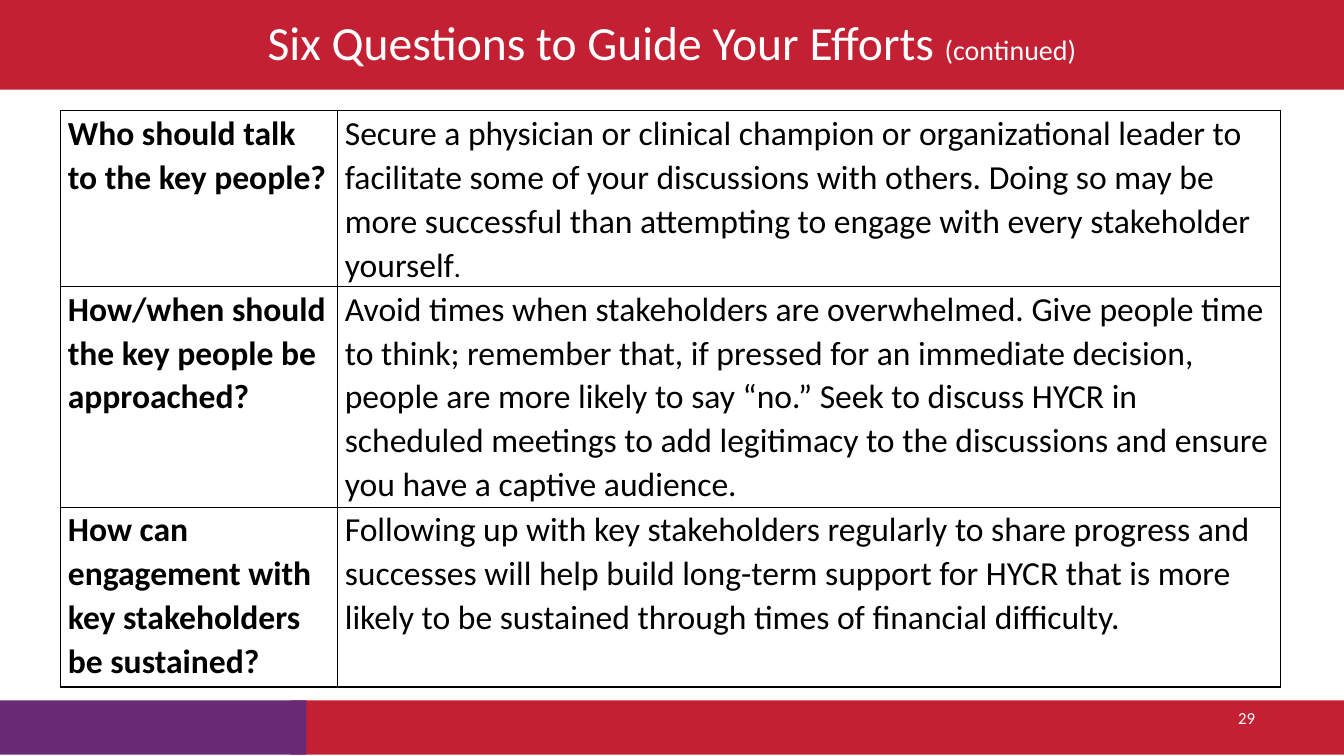
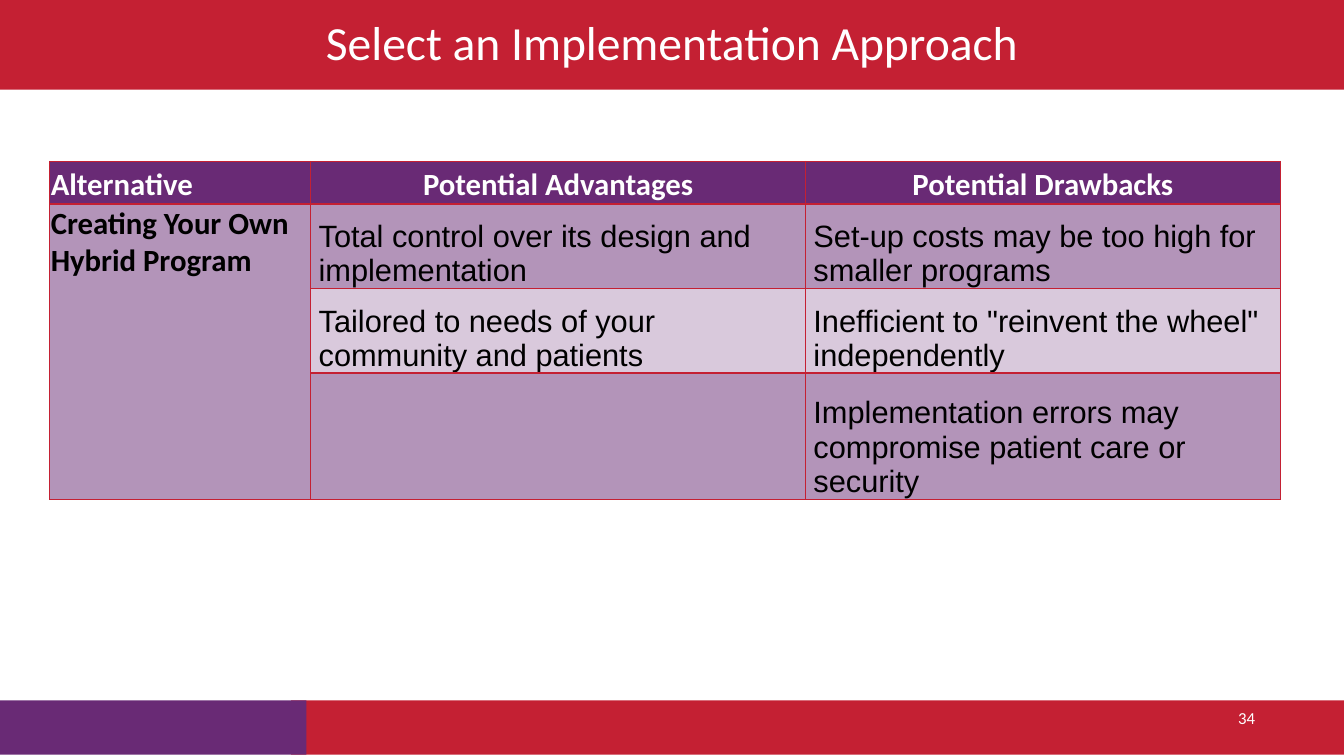
from lxml import etree
from pptx import Presentation
from pptx import util as u
from pptx.dml.color import RGBColor
from pptx.enum import shapes, text
from pptx.oxml.ns import qn

RED = RGBColor(0xC4, 0x20, 0x33)
PURPLE = RGBColor(0x69, 0x2A, 0x75)
WHITE = RGBColor(0xFF, 0xFF, 0xFF)
BLACK = RGBColor(0, 0, 0)

HEADING_FONT = "Calibri"
BODY_FONT = "Arial"
SLIDE_WIDTH, SLIDE_HEIGHT = 33.87, 19.05
TITLE_HEIGHT = 2.26
FOOTER_TOP, FOOTER_HEIGHT = 17.65, 1.37
FOOTER_RED_LEFT, FOOTER_PURPLE_WIDTH = 7.34, 7.72

QUESTIONS = [
    ("Who should talk to the key people?",
     [("Secure a physician or clinical champion or organizational leader to "
       "facilitate some of your discussions with others. Doing so may be more "
       "successful than attempting to engage with every stakeholder yourself", 24),
      (".", 20)]),
    ("How/when should the key people be approached?",
     [("Avoid times when stakeholders are overwhelmed. Give people time to think; "
       "remember that, if pressed for an immediate decision, people are more likely "
       "to say “no.” Seek to discuss HYCR in scheduled meetings to add legitimacy "
       "to the discussions and ensure you have a captive audience.", 24)]),
    ("How can engagement with key stakeholders be sustained?",
     [("Following up with key stakeholders regularly to share progress and successes "
       "will help build long-term support for HYCR that is more likely to be "
       "sustained through times of financial difficulty.", 24)]),
]

APPROACH_HEADINGS = ["Alternative", "Potential Advantages", "Potential Drawbacks"]
APPROACH_NAME = "Creating Your Own Hybrid Program"
APPROACH_POINTS = [
    ("Total control over its design and implementation",
     "Set-up costs may be too high for smaller programs"),
    ("Tailored to needs of your community and patients",
     'Inefficient to "reinvent the wheel" independently'),
    ("", "Implementation errors may compromise patient care or security"),
]


def write(paragraph, runs, color, font=HEADING_FONT, bold=False,
          align=text.PP_ALIGN.LEFT, spacing=1.0):
    """Fill a paragraph from (text, size) pairs."""
    paragraph.alignment = align
    paragraph.line_spacing = spacing
    paragraph.font.name = font
    paragraph.font.bold = bold
    paragraph.font.color.rgb = color
    paragraph.font.size = u.Pt(runs[0][1])
    for content, size in runs:
        run = paragraph.add_run()
        run.text = content
        if size != runs[0][1]:
            run.font.size = u.Pt(size)


def add_band(slide, left, top, width, height, color):
    band = slide.shapes.add_shape(shapes.MSO_SHAPE.RECTANGLE,
                                  u.Cm(left), u.Cm(top), u.Cm(width), u.Cm(height))
    band.shadow.inherit = False
    band.fill.solid()
    band.fill.fore_color.rgb = color
    band.line.fill.background()


def add_label(slide, left, top, width, height, runs, **style):
    """Add white text centred vertically in its box."""
    box = slide.shapes.add_textbox(u.Cm(left), u.Cm(top), u.Cm(width), u.Cm(height))
    frame = box.text_frame
    frame.word_wrap = True
    frame.vertical_anchor = text.MSO_ANCHOR.MIDDLE
    write(frame.paragraphs[0], runs, WHITE, **style)


def add_framed_slide(presentation, title_runs, number):
    """Add a slide with its title band, footer bands and page number."""
    slide = presentation.slides.add_slide(presentation.slide_layouts[6])
    add_band(slide, FOOTER_RED_LEFT, FOOTER_TOP, SLIDE_WIDTH - FOOTER_RED_LEFT,
             FOOTER_HEIGHT, RED)
    add_band(slide, 0, FOOTER_TOP, FOOTER_PURPLE_WIDTH, FOOTER_HEIGHT, PURPLE)
    add_band(slide, 0, 0, SLIDE_WIDTH, TITLE_HEIGHT, RED)
    add_label(slide, 0, 0, SLIDE_WIDTH, TITLE_HEIGHT, title_runs,
              align=text.PP_ALIGN.CENTER, spacing=0.9)
    add_label(slide, 26.16, 17.58, 5.72, 1.02, [(str(number), 12)],
              align=text.PP_ALIGN.RIGHT)
    return slide


def add_grid(slide, left, top, widths, heights, border):
    """Add an unfilled table with thin borders around every cell."""
    frame = slide.shapes.add_table(len(heights), len(widths), u.Cm(left), u.Cm(top),
                                   u.Cm(sum(widths)), u.Cm(sum(heights)))
    table = frame.table
    table.first_row = table.horz_banding = False
    for column, width in zip(table.columns, widths):
        column.width = u.Cm(width)
    for row, height in zip(table.rows, heights):
        row.height = u.Cm(height)
    for cell in table.iter_cells():
        cell.fill.background()
        set_borders(cell, border)
    return table


def set_borders(cell, color):
    properties = cell._tc.get_or_add_tcPr()
    for index, side in enumerate(("a:lnL", "a:lnR", "a:lnT", "a:lnB")):
        line = etree.Element(qn(side), w=str(u.Pt(1)))
        fill = etree.SubElement(line, qn("a:solidFill"))
        etree.SubElement(fill, qn("a:srgbClr"), val=str(color))
        properties.insert(index, line)


def set_margins(cell, left, right, top=0):
    cell.margin_left, cell.margin_right = u.Cm(left), u.Cm(right)
    cell.margin_top, cell.margin_bottom = u.Cm(top), u.Cm(0)


def tint(cell, opacity):
    """Fill a cell with purple at an opacity in percent."""
    cell.fill.solid()
    cell.fill.fore_color.rgb = PURPLE
    if opacity < 100:
        color = cell._tc.tcPr.find(qn("a:solidFill")).find(qn("a:srgbClr"))
        etree.SubElement(color, qn("a:alpha"), val=str(opacity * 1000))


def add_questions_slide(presentation):
    title = [("Six Questions to Guide Your Efforts", 34), (" ", 32), ("(continued)", 20)]
    slide = add_framed_slide(presentation, title, 29)
    table = add_grid(slide, 1.52, 2.79, [6.98, 23.77], [4.43, 5.56, 4.53], BLACK)
    for row, (question, answer) in enumerate(QUESTIONS):
        for column, runs in enumerate(([(question, 24)], answer)):
            cell = table.cell(row, column)
            set_margins(cell, 0.19, 0.19)
            write(cell.text_frame.paragraphs[0], runs, BLACK,
                  bold=column == 0, spacing=1.07)


def add_approach_slide(presentation):
    slide = add_framed_slide(presentation, [("Select an Implementation Approach", 34)], 34)
    table = add_grid(slide, 1.25, 4.07, [6.58, 12.47, 11.96],
                     [1.07, 2.13, 2.13, 3.18], RED)
    for cell in table.iter_cells():
        set_margins(cell, 0.03, 0.03, 0.03)
        cell.vertical_anchor = text.MSO_ANCHOR.BOTTOM

    for column, heading in enumerate(APPROACH_HEADINGS):
        cell = table.cell(0, column)
        tint(cell, 100)
        write(cell.text_frame.paragraphs[0], [(heading, 22)], WHITE, bold=True,
              align=text.PP_ALIGN.CENTER if column else text.PP_ALIGN.LEFT)

    name_cell = table.cell(1, 0)
    name_cell.merge(table.cell(len(APPROACH_POINTS), 0))
    name_cell.vertical_anchor = text.MSO_ANCHOR.TOP
    tint(name_cell, 50)
    write(name_cell.text_frame.paragraphs[0], [(APPROACH_NAME, 22)], BLACK, bold=True)

    for row, points in enumerate(APPROACH_POINTS, start=1):
        for column, point in enumerate(points, start=1):
            cell = table.cell(row, column)
            tint(cell, 50 if row % 2 else 25)
            set_margins(cell, 0.2, 0.03, 0.03)
            if point:
                write(cell.text_frame.paragraphs[0], [(point, 22)], BLACK, font=BODY_FONT)


def main():
    presentation = Presentation()
    presentation.slide_width = u.Cm(SLIDE_WIDTH)
    presentation.slide_height = u.Cm(SLIDE_HEIGHT)
    add_questions_slide(presentation)
    add_approach_slide(presentation)
    presentation.save("out.pptx")


if __name__ == "__main__":
    main()
